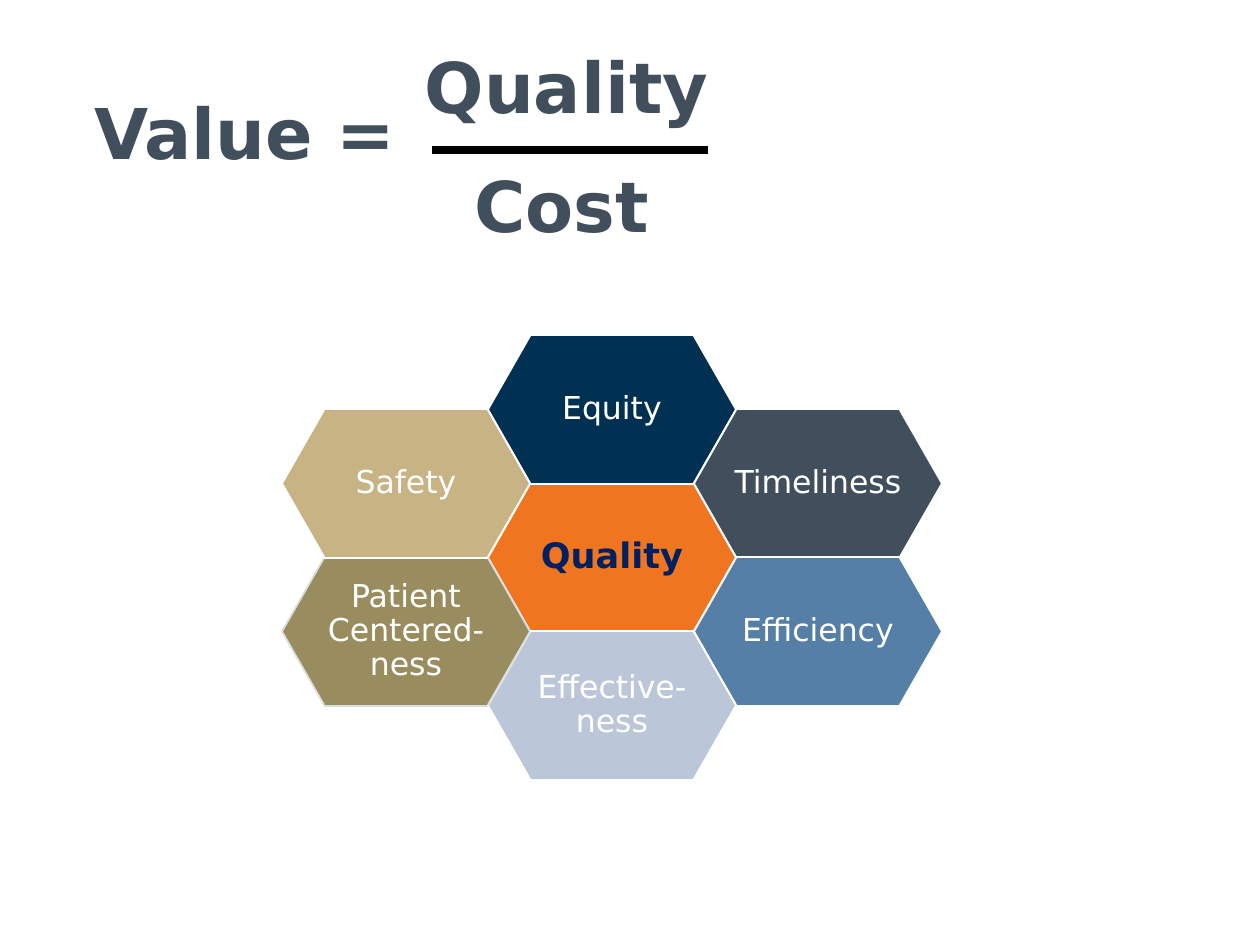
"""Build the value equation slide with its honeycomb of quality dimensions."""
import dataclasses

import lxml.etree
import pptx
import pptx.dml.color
import pptx.enum.shapes
import pptx.enum.text
import pptx.oxml.ns
import pptx.util

PX = pptx.util.Inches(1) / 126
ALIGN = pptx.enum.text.PP_ALIGN
ANCHOR = pptx.enum.text.MSO_ANCHOR
SHAPE = pptx.enum.shapes.MSO_SHAPE


@dataclasses.dataclass(frozen=True)
class Theme:
    font: str = "DejaVu Sans"
    slate: str = "414F5C"
    navy: str = "003152"
    orange: str = "EF7521"
    blue: str = "557FA6"
    mist: str = "BBC7D9"
    olive: str = "998D5F"
    sand: str = "C8B385"
    ink: str = "002060"
    black: str = "000000"
    white: str = "FFFFFF"
    silver: str = "D8DFE0"
    equation_size: int = 40
    core_size: int = 20
    label_size: int = 18


THEME = Theme()
HEX_WIDTH, HEX_HEIGHT = 248, 149
CORE_LEFT, CORE_TOP = 488, 483
COLUMN_STEP, HALF_ROW = 206, 74
DIMENSIONS = [
    ("Equity", 0, -2, THEME.navy, THEME.white),
    ("Timeliness", 1, -1, THEME.slate, THEME.white),
    ("Efficiency", 1, 1, THEME.blue, THEME.white),
    ("Effective-ness", 0, 2, THEME.mist, THEME.white),
    ("Patient Centered-ness", -1, 1, THEME.olive, THEME.silver),
    ("Safety", -1, -1, THEME.sand, THEME.white),
]


def px(*lengths):
    return [pptx.util.Emu(round(length * PX)) for length in lengths]


def rgb(color):
    return pptx.dml.color.RGBColor.from_string(color)


def write(frame, text, *, size, color, bold=False, align=ALIGN.CENTER,
          anchor=ANCHOR.TOP, insets=(13, 6), spacing=1.0):
    frame.word_wrap = True
    frame.auto_size = pptx.enum.text.MSO_AUTO_SIZE.NONE
    frame.vertical_anchor = anchor
    frame.margin_left = frame.margin_right = px(insets[0])[0]
    frame.margin_top = frame.margin_bottom = px(insets[1])[0]
    para = frame.paragraphs[0]
    para.alignment = align
    para.line_spacing = spacing
    span = para.add_run()
    span.text = text
    span.font.name = THEME.font
    span.font.size = pptx.util.Pt(size)
    span.font.bold = bold
    span.font.color.rgb = rgb(color)


def add_title(page, text, left, top, width, height):
    box = page.shapes.title
    box.left, box.top, box.width, box.height = px(left, top, width, height)
    write(box.text_frame, text, size=THEME.equation_size, color=THEME.slate,
          bold=True, align=ALIGN.LEFT)


def add_term(page, text, left, top, width, height):
    box = page.shapes.add_textbox(*px(left, top, width, height))
    write(box.text_frame, text, size=THEME.equation_size, color=THEME.slate, bold=True)


def add_fraction_bar(page, left, right, top):
    bar = page.shapes.add_connector(
        pptx.enum.shapes.MSO_CONNECTOR.STRAIGHT, *px(left, top, right, top))
    bar.line.color.rgb = rgb(THEME.black)
    bar.line.width = pptx.util.Pt(4.5)
    properties = bar._element.find(pptx.oxml.ns.qn("p:spPr"))
    lxml.etree.SubElement(properties, pptx.oxml.ns.qn("a:effectLst"))


def add_hexagon(page, text, column, half_row, fill, edge, **text_format):
    left = CORE_LEFT + column * COLUMN_STEP
    top = CORE_TOP + half_row * HALF_ROW
    cell = page.shapes.add_shape(SHAPE.HEXAGON, *px(left, top, HEX_WIDTH, HEX_HEIGHT))
    cell.adjustments[0] = 0.286
    cell.shadow.inherit = False
    cell.fill.solid()
    cell.fill.fore_color.rgb = rgb(fill)
    cell.line.color.rgb = rgb(edge)
    cell.line.width = pptx.util.Pt(1)
    write(cell.text_frame, text, anchor=ANCHOR.MIDDLE, insets=(4, 4), spacing=0.9,
          **text_format)


def main():
    deck = pptx.Presentation()
    deck.slide_width, deck.slide_height = px(1260, 945)
    page = deck.slides.add_slide(deck.slide_layouts.get_by_name("Title Only"))
    add_title(page, "Value =", 81, 84, 476, 97)
    add_term(page, "Quality", 389, 37, 355, 97)
    add_term(page, "Cost", 440, 156, 243, 97)
    add_fraction_bar(page, 432, 708, 150)
    add_hexagon(page, "Quality", 0, 0, THEME.orange, THEME.white,
                size=THEME.core_size, color=THEME.ink, bold=True)
    for dimension in DIMENSIONS:
        add_hexagon(page, *dimension, size=THEME.label_size, color=THEME.white)
    deck.save("out.pptx")


if __name__ == "__main__":
    main()
